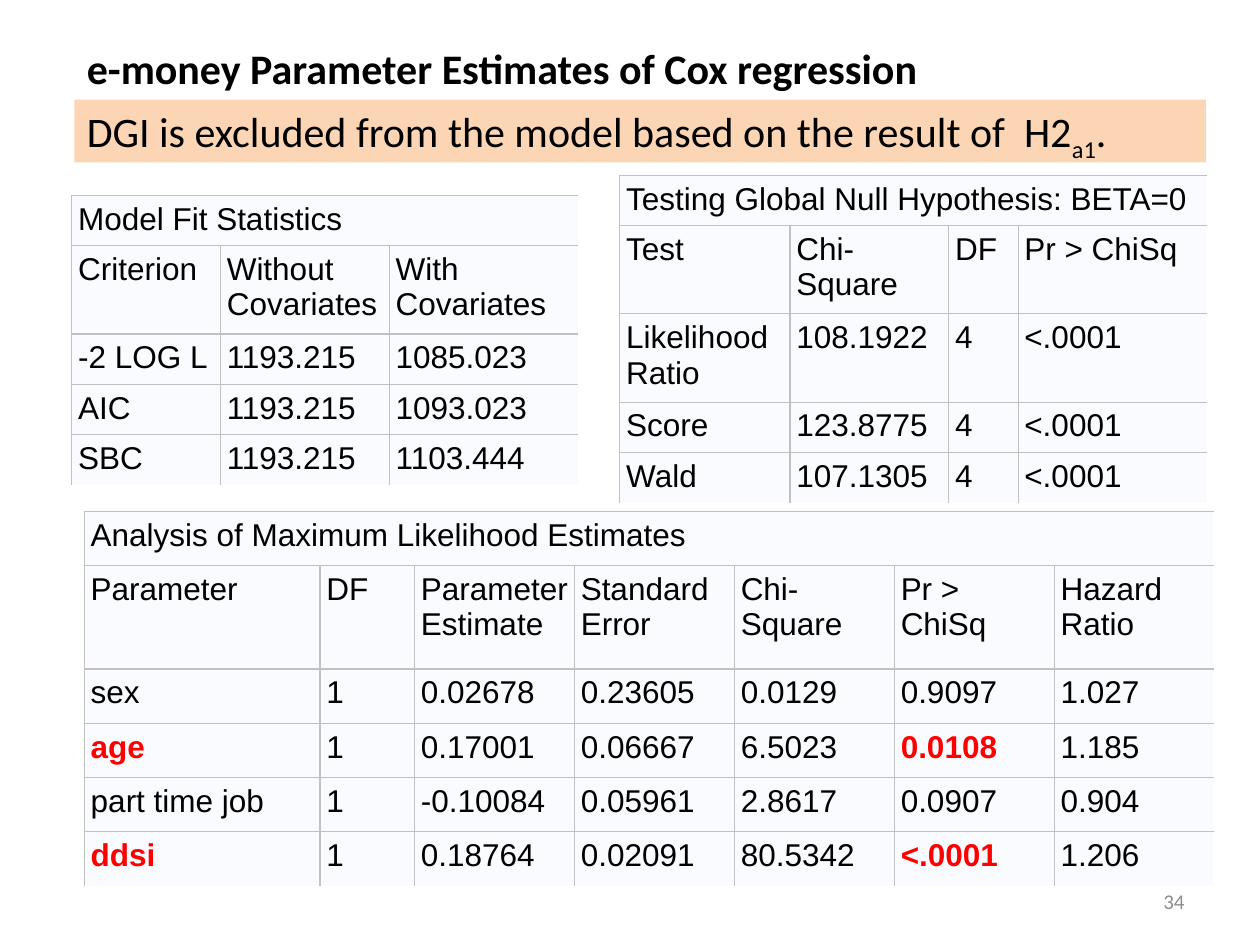
"""Build a slide of Cox regression estimates with three statistics tables."""
from dataclasses import dataclass

import lxml.etree
import pptx
import pptx.dml.color
import pptx.enum.shapes
import pptx.enum.text
import pptx.oxml.ns
import pptx.util

Inches = pptx.util.Inches


@dataclass(frozen=True)
class Theme:
    heading_font: str = "Calibri"
    table_font: str = "Arial"
    heading_size: int = 24
    table_size: int = 18
    number_size: int = 12
    ink: str = "000000"
    accent: str = "FF0000"
    muted: str = "8C8C8C"
    banner: str = "FCD5B5"
    cell: str = "FAFBFE"
    border: str = "C1C1C1"
    border_width: float = 0.75
    cell_margin: float = 0.05


@dataclass(frozen=True)
class StatTable:
    left: float
    top: float
    widths: list[float]
    heights: list[float]
    title: str
    rows: list[list[str]]
    highlights: frozenset[tuple[int, int]] = frozenset()


THEME = Theme()
LINE = 0.39
TWO_LINES = 0.66

TABLES = [
    StatTable(
        0.67, 4.06, [1.87, 0.75] + [1.27] * 5, [0.43, 0.82] + [0.43] * 4,
        "Analysis of Maximum Likelihood Estimates",
        [
            ["Parameter", "DF", "Parameter\nEstimate", "Standard\nError",
             "Chi-Square", "Pr > ChiSq", "Hazard\nRatio"],
            ["sex", "1", "0.02678", "0.23605", "0.0129", "0.9097", "1.027"],
            ["age", "1", "0.17001", "0.06667", "6.5023", "0.0108", "1.185"],
            ["part time job", "1", "-0.10084", "0.05961", "2.8617", "0.0907", "0.904"],
            ["ddsi", "1", "0.18764", "0.02091", "80.5342", "<.0001", "1.206"],
        ],
        frozenset({(3, 0), (3, 5), (5, 0), (5, 5)}),
    ),
    StatTable(
        0.57, 1.55, [1.18, 1.34, 1.5], [LINE, TWO_LINES, LINE, LINE, LINE],
        "Model Fit Statistics",
        [
            ["Criterion", "Without\nCovariates", "With\nCovariates"],
            ["-2 LOG L", "1193.215", "1085.023"],
            ["AIC", "1193.215", "1093.023"],
            ["SBC", "1193.215", "1103.444"],
        ],
    ),
    StatTable(
        4.92, 1.39, [1.35, 1.26, 0.55, 1.5], [LINE, TWO_LINES, TWO_LINES, LINE, LINE],
        "Testing Global Null Hypothesis: BETA=0",
        [
            ["Test", "Chi-Square", "DF", "Pr > ChiSq"],
            ["Likelihood Ratio", "108.1922", "4", "<.0001"],
            ["Score", "123.8775", "4", "<.0001"],
            ["Wald", "107.1305", "4", "<.0001"],
        ],
    ),
]


def rgb(color: str) -> pptx.dml.color.RGBColor:
    return pptx.dml.color.RGBColor.from_string(color)


def style_runs(para, font: str, size: int, color: str, bold: bool = False) -> None:
    for span in para.runs:
        span.font.name = font
        span.font.size = pptx.util.Pt(size)
        span.font.color.rgb = rgb(color)
        span.font.bold = bold


def add_border(cell, side: str, visible: bool) -> None:
    qn = pptx.oxml.ns.qn
    properties = cell._tc.get_or_add_tcPr()
    line = lxml.etree.SubElement(properties, qn(f"a:ln{side}"))
    line.set("w", str(pptx.util.Pt(THEME.border_width)))
    fill = lxml.etree.SubElement(line, qn("a:solidFill" if visible else "a:noFill"))
    if visible:
        lxml.etree.SubElement(fill, qn("a:srgbClr")).set("val", THEME.border)


def style_cell(cell, text: str, highlighted: bool, last_column: bool, last_row: bool) -> None:
    margin = Inches(THEME.cell_margin)
    cell.margin_left = cell.margin_right = margin
    cell.margin_top = cell.margin_bottom = margin
    borders = {"L": True, "R": not last_column, "T": True, "B": not last_row}
    for side, visible in borders.items():
        add_border(cell, side, visible)
    cell.fill.solid()
    cell.fill.fore_color.rgb = rgb(THEME.cell)
    para = cell.text_frame.paragraphs[0]
    para.text = text
    color = THEME.accent if highlighted else THEME.ink
    style_runs(para, THEME.table_font, THEME.table_size, color, highlighted)


def add_stat_table(page, stats: StatTable) -> None:
    row_count, column_count = len(stats.heights), len(stats.widths)
    table = page.shapes.add_table(
        row_count, column_count, Inches(stats.left), Inches(stats.top),
        Inches(sum(stats.widths)), Inches(sum(stats.heights)),
    ).table
    table.first_row = table.horz_banding = False
    for column, width in zip(table.columns, stats.widths):
        column.width = Inches(width)
    for row, height in zip(table.rows, stats.heights):
        row.height = Inches(height)
    table.cell(0, 0).merge(table.cell(0, column_count - 1))
    style_cell(table.cell(0, 0), stats.title, False, True, False)
    for r, values in enumerate(stats.rows, start=1):
        for c, value in enumerate(values):
            style_cell(table.cell(r, c), value, (r, c) in stats.highlights,
                       c == column_count - 1, r == row_count - 1)


def add_text(page, left: float, top: float, width: float, height: float,
             text: str, size: int, color: str, bold: bool = False):
    box = page.shapes.add_textbox(Inches(left), Inches(top), Inches(width), Inches(height))
    box.text_frame.word_wrap = True
    box.text_frame.text = text
    style_runs(box.text_frame.paragraphs[0], THEME.heading_font, size, color, bold)
    return box


def add_banner(page) -> None:
    box = page.shapes.add_shape(
        pptx.enum.shapes.MSO_SHAPE.RECTANGLE,
        Inches(0.59), Inches(0.79), Inches(8.98), Inches(0.5),
    )
    box.shadow.inherit = False
    box.fill.solid()
    box.fill.fore_color.rgb = rgb(THEME.banner)
    box.line.fill.background()
    box.text_frame.word_wrap = True
    box.text_frame.vertical_anchor = pptx.enum.text.MSO_ANCHOR.TOP
    para = box.text_frame.paragraphs[0]
    para.alignment = pptx.enum.text.PP_ALIGN.LEFT
    for text in ("DGI is excluded from the model based on the result of  H2", "a1", "."):
        para.add_run().text = text
    style_runs(para, THEME.heading_font, THEME.heading_size, THEME.ink)
    para.runs[1]._r.get_or_add_rPr().set("baseline", "-25000")


def main() -> None:
    deck = pptx.Presentation()
    deck.slide_width, deck.slide_height = Inches(10), Inches(7.5)
    page = deck.slides.add_slide(deck.slide_layouts[6])
    number = add_text(page, 7.17, 6.95, 2.33, 0.4, "34", THEME.number_size, THEME.muted)
    number.text_frame.vertical_anchor = pptx.enum.text.MSO_ANCHOR.MIDDLE
    number.text_frame.paragraphs[0].alignment = pptx.enum.text.PP_ALIGN.RIGHT
    for stats in TABLES:
        add_stat_table(page, stats)
    add_text(page, 0.59, 0.29, 8.35, 0.5, "e-money Parameter Estimates of Cox regression",
             THEME.heading_size, THEME.ink, bold=True)
    add_banner(page)
    deck.save("out.pptx")


if __name__ == "__main__":
    main()
